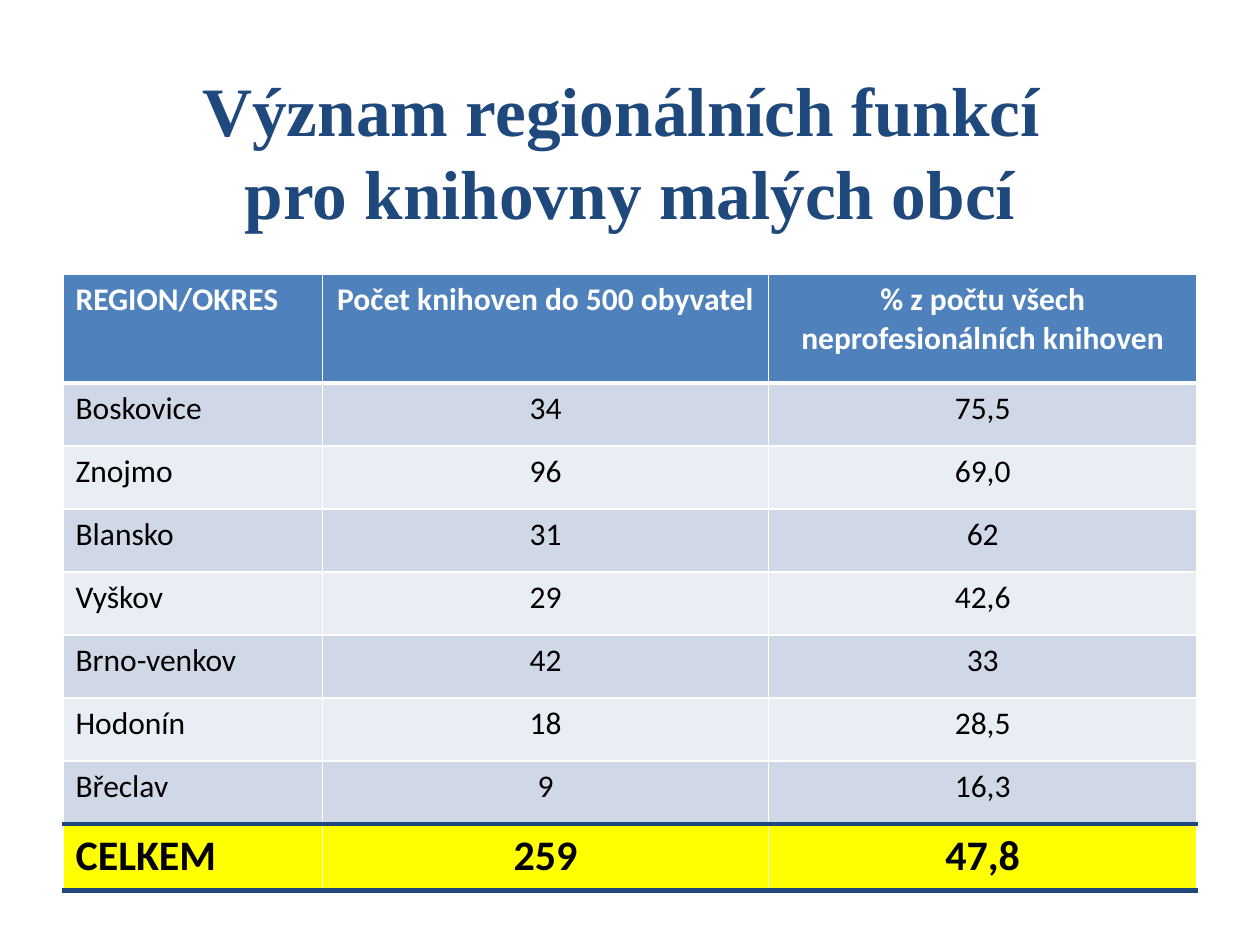
from dataclasses import dataclass
from itertools import pairwise

from lxml.etree import SubElement
from pptx import Presentation
from pptx.dml.color import RGBColor
from pptx.enum.text import MSO_ANCHOR, MSO_AUTO_SIZE, PP_ALIGN
from pptx.oxml.ns import qn
from pptx.slide import Slide
from pptx.table import _Cell as Cell
from pptx.text.text import _Paragraph as Paragraph
from pptx.util import Inches, Pt


@dataclass(frozen=True)
class Theme:
    navy: str = "1F497D"
    blue: str = "4F81BD"
    dark: str = "D0D8E8"
    light: str = "E9EDF4"
    yellow: str = "FFFF00"
    white: str = "FFFFFF"
    black: str = "000000"
    serif: str = "Times New Roman"
    sans: str = "Calibri"
    head: float = 39.6
    body: float = 18
    total: float = 24


@dataclass(frozen=True)
class Style:
    fill: str
    ink: str
    size: float
    bold: bool
    height: float


@dataclass(frozen=True)
class Line:
    color: str
    width: float


THEME = Theme()
HEADER = Style(THEME.blue, THEME.white, THEME.body, True, 0.86)
BANDS = [Style(fill, THEME.black, THEME.body, False, 0.5)
         for fill in (THEME.dark, THEME.light)]
TOTAL = Style(THEME.yellow, THEME.black, THEME.total, True, 0.53)

THIN = Line(THEME.white, 1)
THICK = Line(THEME.white, 3)
RULE = Line(THEME.navy, 3)

WIDTHS = [2.06, 3.54, 3.4]
LABELS = ("REGION/OKRES", "Počet knihoven do 500 obyvatel",
          "% z počtu všech neprofesionálních knihoven")
REGIONS = [
    ("Boskovice", "34", "75,5"),
    ("Znojmo", "96", "69,0"),
    ("Blansko", "31", "62"),
    ("Vyškov", "29", "42,6"),
    ("Brno-venkov", "42", "33"),
    ("Hodonín", "18", "28,5"),
    ("Břeclav", "9", "16,3"),
]
SUM = ("CELKEM", "259", "47,8")


def set_font(para: Paragraph, name: str, size: float, ink: str, bold: bool) -> None:
    font = para.font
    font.name, font.size, font.bold = name, Pt(size), bold
    font.color.rgb = RGBColor.from_string(ink)


def add_edges(cell: Cell, top: Line, bottom: Line) -> None:
    """Border the cell; call before filling, as the schema puts lines first."""
    props = cell._tc.get_or_add_tcPr()
    for side, line in zip("LRTB", (THIN, THIN, top, bottom)):
        edge = SubElement(props, qn(f"a:ln{side}"), w=str(Pt(line.width)))
        fill = SubElement(edge, qn("a:solidFill"))
        SubElement(fill, qn("a:srgbClr"), val=line.color)


def add_title(slide: Slide) -> None:
    title = slide.shapes.title
    title.left, title.top = Inches(0.5), Inches(0.52)
    title.width, title.height = Inches(9), Inches(1.34)
    frame = title.text_frame
    frame.auto_size = MSO_AUTO_SIZE.NONE
    frame.vertical_anchor = MSO_ANCHOR.MIDDLE
    frame.text = "Význam regionálních funkcí \vpro knihovny malých obcí"
    para = frame.paragraphs[0]
    para.alignment = PP_ALIGN.CENTER
    set_font(para, THEME.serif, THEME.head, THEME.navy, True)


def add_grid(slide: Slide) -> None:
    rows = [LABELS, *REGIONS, SUM]
    styles = [HEADER, *(BANDS[i % 2] for i in range(len(REGIONS))), TOTAL]
    edges = [THIN, THICK, *[THIN] * (len(REGIONS) - 1), RULE, RULE]
    height = sum(style.height for style in styles)
    table = slide.shapes.add_table(
        len(rows), len(WIDTHS), Inches(0.5), Inches(2.18),
        Inches(sum(WIDTHS)), Inches(height)).table
    for column, width in zip(table.columns, WIDTHS):
        column.width = Inches(width)
    for row, texts, style, (top, bottom) in zip(
            table.rows, rows, styles, pairwise(edges)):
        row.height = Inches(style.height)
        for i, (cell, text) in enumerate(zip(row.cells, texts)):
            add_edges(cell, top, bottom)
            cell.fill.solid()
            cell.fill.fore_color.rgb = RGBColor.from_string(style.fill)
            cell.text = text
            para = cell.text_frame.paragraphs[0]
            para.alignment = PP_ALIGN.CENTER if i else PP_ALIGN.LEFT
            set_font(para, THEME.sans, style.size, style.ink, style.bold)


def main() -> None:
    deck = Presentation()
    deck.slide_width, deck.slide_height = Inches(10), Inches(7.5)
    slide = deck.slides.add_slide(deck.slide_layouts[5])
    add_title(slide)
    add_grid(slide)
    deck.save("out.pptx")


if __name__ == "__main__":
    main()
